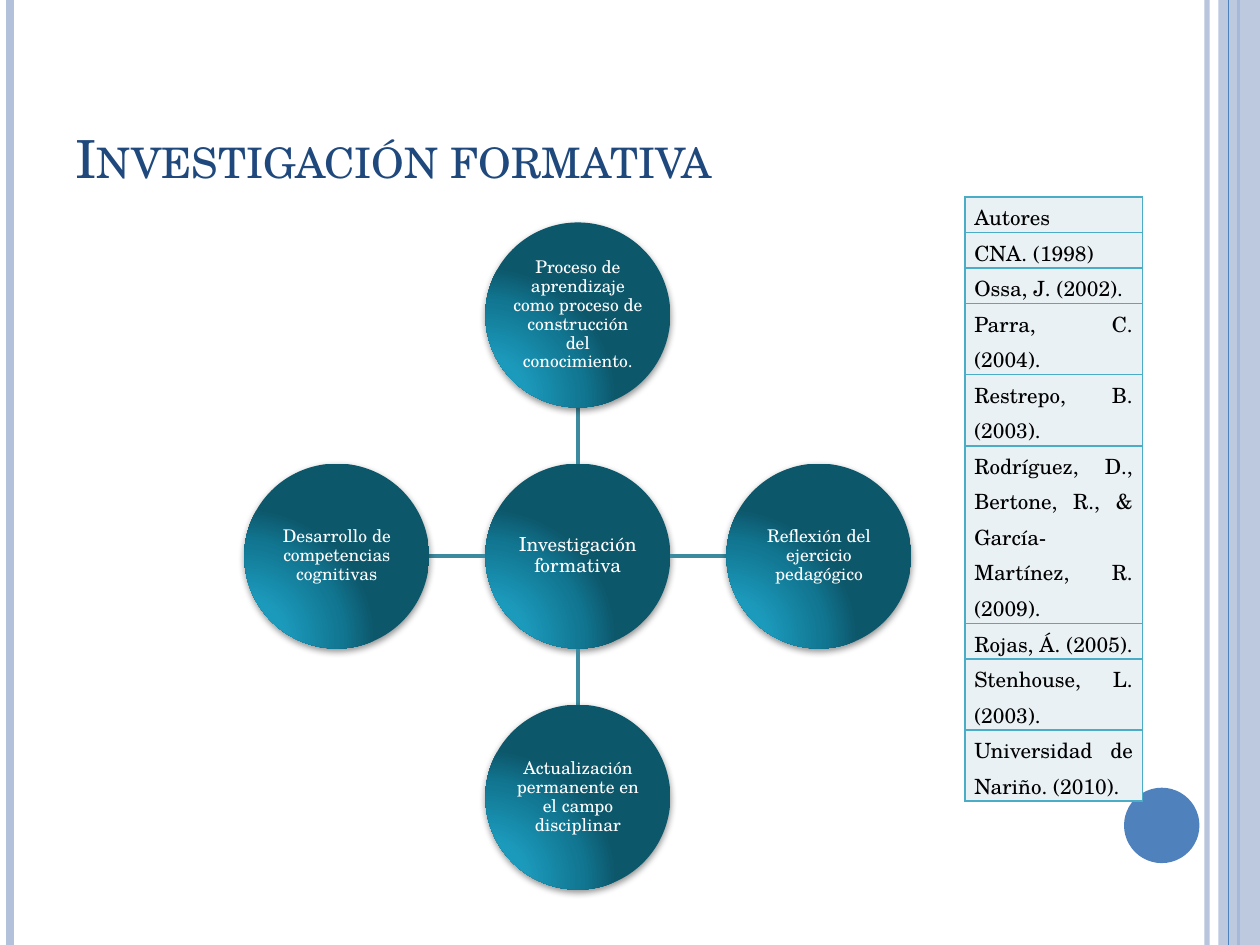
from lxml import etree
from pptx import Presentation
from pptx.dml.color import RGBColor
from pptx.enum.shapes import MSO_CONNECTOR, MSO_SHAPE
from pptx.enum.text import MSO_ANCHOR, PP_ALIGN
from pptx.oxml import parse_xml
from pptx.oxml.ns import qn
from pptx.util import Cm, Pt

OVAL, RECT = MSO_SHAPE.OVAL, MSO_SHAPE.RECTANGLE
LINE = MSO_CONNECTOR.STRAIGHT
LEFT, MID, JUST = PP_ALIGN.LEFT, PP_ALIGN.CENTER, PP_ALIGN.JUSTIFY
FONT = "TeX Gyre Schola"
NS = 'xmlns:a="http://schemas.openxmlformats.org/drawingml/2006/main"'
WIDE, HIGH = 25.4, 19.05

TITLE = "Investigación formativa"
HUB = "Investigación formativa"
NODES = [
    ("Proceso de aprendizaje como proceso de construcción del conocimiento.", 0, -1),
    ("Reflexión del ejercicio pedagógico", 1, 0),
    ("Actualización permanente en el campo disciplinar", 0, 1),
    ("Desarrollo de competencias cognitivas", -1, 0),
]
AUTHORS = [
    "Autores", "CNA. (1998)", "Ossa, J. (2002).", "Parra, C. (2004). ",
    "Restrepo, B. (2003).",
    "Rodríguez, D., Bertone, R., & García-Martínez, R. (2009). ",
    "Rojas, Á. (2005). ", "Stenhouse, L. (2003). ",
    "Universidad de Nariño. (2010). ",
]
BARS = [
    (24.33, "B3C1DB", 3, 93), (0.2, "B3C1DB", 4.5, 100),
    (24.97, "4F81BD", 1.5, 100),
]
EDGE = (24.77, "4F81BD", 0.75, 100)
STOPS = [(0, "1DA0C3"), (30, "1C9ABC"), (75, "117691"), (100, "0D576B")]
HUB_X, HUB_Y, SIZE, STEP = 11.65, 11.21, 3.73, 4.86


def color(code):
    return RGBColor.from_string(code)


def fade(shape, alpha):
    if alpha < 100:
        tint = next(shape._element.spPr.iter(qn("a:srgbClr")))
        etree.SubElement(tint, qn("a:alpha"), val=str(alpha * 1000))


def write(frame, text, size=10, ink="FFFFFF", align=MID, gap=None, caps=False):
    par = frame.paragraphs[0]
    par.alignment = align
    par.line_spacing = gap
    run = par.add_run()
    run.text = text
    run.font.name = FONT
    run.font.size = Pt(size)
    run.font.color.rgb = color(ink)
    if caps:
        run.font._element.set("cap", "small")


def draw_line(x1, y1, x2, y2, ink, width, alpha=100):
    line = shapes.add_connector(LINE, Cm(x1), Cm(y1), Cm(x2), Cm(y2))
    line.line.color.rgb = color(ink)
    line.line.width = Pt(width)
    fade(line, alpha)
    etree.SubElement(line._element.spPr, qn("a:effectLst"))


def draw_shape(kind, x, y, w, h, fill, alpha=100):
    shape = shapes.add_shape(kind, Cm(x), Cm(y), Cm(w), Cm(h))
    shape.shadow.inherit = False
    shape.fill.solid()
    shape.fill.fore_color.rgb = color(fill)
    shape.line.fill.background()
    fade(shape, alpha)
    return shape


def draw_node(text, x, y, size):
    node = draw_shape(OVAL, x - SIZE / 2, y - SIZE / 2, SIZE, SIZE, "0D576B")
    props = node._element.spPr
    stops = "".join(
        f'<a:gs pos="{pos * 1000}"><a:srgbClr val="{code}"/></a:gs>'
        for pos, code in STOPS)
    props.replace(props.find(qn("a:solidFill")), parse_xml(
        f'<a:gradFill {NS} rotWithShape="1"><a:gsLst>{stops}</a:gsLst>'
        '<a:path path="circle"><a:fillToRect l="5000" t="100000" r="120000"'
        ' b="10000"/></a:path></a:gradFill>'))
    props.find(qn("a:effectLst")).append(parse_xml(
        f'<a:outerShdw {NS} blurRad="50800" dist="20320" dir="5400000"'
        ' rotWithShape="0"><a:srgbClr val="000000"><a:alpha val="42000"/>'
        '</a:srgbClr></a:outerShdw>'))
    frame = node.text_frame
    frame.word_wrap = True
    frame.vertical_anchor = MSO_ANCHOR.MIDDLE
    frame.margin_left = frame.margin_right = Cm(0.02)
    frame.margin_top = frame.margin_bottom = Cm(0.02)
    write(frame, text, size=size, gap=0.9)


def draw_table(x, y, w):
    frame = shapes.add_table(len(AUTHORS), 1, Cm(x), Cm(y), Cm(w), Cm(5.6))
    table = frame.table
    table.first_row = table.horz_banding = False
    table.columns[0].width = Cm(w)
    for row, text in zip(table.rows, AUTHORS):
        row.height = Cm(0.61)
        cell = row.cells[0]
        cell.margin_left = cell.margin_right = Cm(0.19)
        cell.margin_top = cell.margin_bottom = 0
        write(cell.text_frame, text, size=12, ink="000000", align=JUST, gap=1.15)
        props = cell._tc.get_or_add_tcPr()
        for side in ("lnL", "lnR", "lnT", "lnB"):
            props.append(parse_xml(
                f'<a:{side} {NS} w="12700"><a:solidFill>'
                f'<a:srgbClr val="4BACC6"/></a:solidFill></a:{side}>'))
        cell.fill.solid()
        cell.fill.fore_color.rgb = color("E9F1F5")


deck = Presentation()
deck.slide_width, deck.slide_height = Cm(WIDE), Cm(HIGH)
slide = deck.slides.add_slide(deck.slide_layouts[5])
shapes = slide.shapes

for x, *style in BARS:
    draw_line(x, 0, x, HIGH, *style)
draw_shape(RECT, 24.56, 0, 0.84, HIGH, "B3C1DB", 87)
draw_line(EDGE[0], 0, EDGE[0], HIGH, *EDGE[1:])
draw_shape(OVAL, 22.66, 15.88, 1.52, 1.52, "4F81BD")

title = shapes.title
title.left, title.top, title.width, title.height = Cm(1.27), Cm(0.76), Cm(20.75), Cm(3.18)
title.text_frame.vertical_anchor = MSO_ANCHOR.BOTTOM
write(title.text_frame, TITLE, size=30, ink="1F497D", align=LEFT, caps=True)

draw_node(HUB, HUB_X, HUB_Y, 11)
near, far = SIZE / 2, STEP - SIZE / 2
for text, dx, dy in NODES:
    draw_line(HUB_X + dx * near, HUB_Y + dy * near,
              HUB_X + dx * far, HUB_Y + dy * far, "3C8A9F", 2)
    draw_node(text, HUB_X + dx * STEP, HUB_Y + dy * STEP, 10)

draw_table(19.45, 3.97, 3.58)
deck.save("out.pptx")
